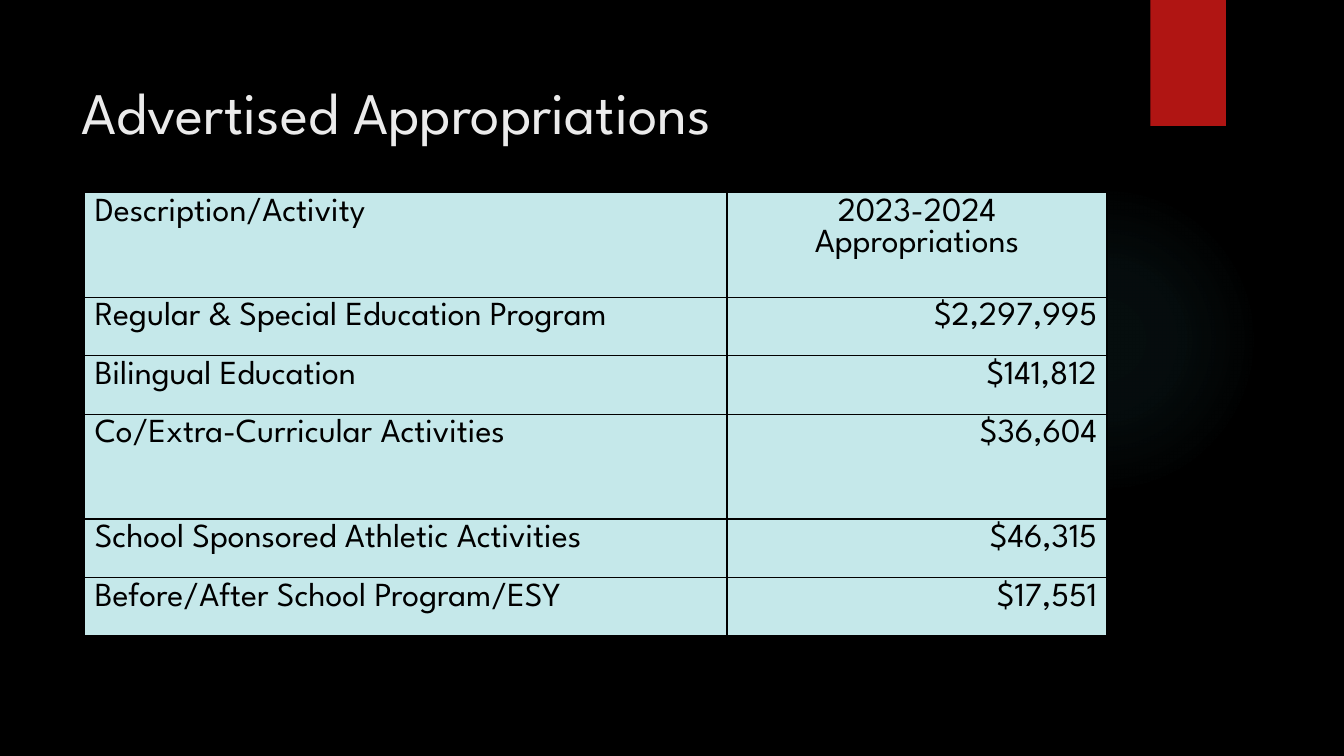
import pptx
import pptx.util
import pptx.dml.color
import pptx.enum.shapes
import pptx.enum.text
import pptx.oxml
import pptx.oxml.ns

Inches = pptx.util.Inches
SHAPE = pptx.enum.shapes.MSO_SHAPE
ALIGN = pptx.enum.text.PP_ALIGN
FONT = "League Spartan"

TITLE = "Advertised Appropriations"
ROWS = [
    ("Description/Activity", "2023-2024 Appropriations", 1.04),
    ("Regular & Special Education Program", "$2,297,995", 0.58),
    ("Bilingual Education", "$141,812", 0.58),
    ("Co/Extra-Curricular Activities", "$36,604", 1.04),
    ("School Sponsored Athletic Activities", "$46,315", 0.58),
    ("Before/After School Program/ESY", "$17,551", 0.58),
]
COL_WIDTHS = [6.37, 3.77]
GLOW_STOPS = [(0, 7), (36, 6), (69, 0)]
TITLE_FORMAT = {"name": FONT, "size": pptx.util.Pt(42), "bold": False}
CELL_FORMAT = {"name": FONT, "size": pptx.util.Pt(24), "bold": False}
TITLE_FRAME = {"word_wrap": True, "margin_top": Inches(0.25),
               "vertical_anchor": pptx.enum.text.MSO_ANCHOR.TOP}


def rgb(value):
    return pptx.dml.color.RGBColor.from_string(value)


def xml(tag, body):
    return pptx.oxml.parse_xml(f"<a:{tag} {pptx.oxml.ns.nsdecls('a')} {body}</a:{tag.split()[0]}>")


def apply(target, values):
    for name, value in values.items():
        setattr(target, name, value)


def write(tf, text, values, color, align):
    p = tf.paragraphs[0]
    p.alignment = align
    r = p.add_run()
    r.text = text
    apply(r.font, values)
    r.font.color.rgb = rgb(color)


def add_shape(s, kind, box, color):
    sp = s.shapes.add_shape(kind, *map(Inches, box))
    sp.shadow.inherit = False
    sp.fill.solid()
    sp.fill.fore_color.rgb = rgb(color)
    sp.line.fill.background()
    return sp


def add_glow(s):
    sp = add_shape(s, SHAPE.OVAL, (9.41, 1.83, 3.08, 3.08), "50B9C1")
    stops = "".join(
        f'<a:gs pos="{pos * 1000}"><a:srgbClr val="50B9C1"><a:alpha val="{alpha * 1000}"/></a:srgbClr></a:gs>'
        for pos, alpha in GLOW_STOPS)
    grad = xml("gradFill", f'><a:gsLst>{stops}</a:gsLst><a:path path="circle">'
               '<a:fillToRect l="50000" t="50000" r="50000" b="50000"/></a:path>')
    spPr = sp._element.spPr
    spPr.replace(spPr.find(pptx.oxml.ns.qn("a:solidFill")), grad)


def add_borders(cell):
    tcPr = cell._tc.get_or_add_tcPr()
    for i, side in enumerate(("lnL", "lnR", "lnT", "lnB")):
        tcPr.insert(i, xml(side, 'w="12700"><a:solidFill><a:srgbClr val="000000"/></a:solidFill>'))


def add_appropriations(s):
    table = s.shapes.add_table(len(ROWS), len(COL_WIDTHS), Inches(0.84), Inches(1.91),
                               Inches(sum(COL_WIDTHS)), Inches(sum(row[2] for row in ROWS))).table
    for column, width in zip(table.columns, COL_WIDTHS):
        column.width = Inches(width)
    for i, (activity, amount, height) in enumerate(ROWS):
        table.rows[i].height = Inches(height)
        amount_align = ALIGN.RIGHT if i else ALIGN.CENTER
        for j, (text, align) in enumerate([(activity, ALIGN.LEFT), (amount, amount_align)]):
            cell = table.cell(i, j)
            cell.fill.solid()
            cell.fill.fore_color.rgb = rgb("C5E8EA")
            add_borders(cell)
            write(cell.text_frame, text, CELL_FORMAT, "000000", align)


def main():
    prs = pptx.Presentation()
    prs.slide_width, prs.slide_height = Inches(13.33), Inches(7.5)
    s = prs.slides.add_slide(prs.slide_layouts[5])
    s.background.fill.solid()
    s.background.fill.fore_color.rgb = rgb("000000")

    add_glow(s)
    add_shape(s, SHAPE.RECTANGLE, (11.41, 0, 0.75, 1.25), "B01513")

    title = s.shapes.title
    apply(title, dict(zip(("left", "top", "width", "height"), map(Inches, (0.71, 0.5, 10.29, 1.53)))))
    apply(title.text_frame, TITLE_FRAME)
    write(title.text_frame, TITLE, TITLE_FORMAT, "EBEBEB", ALIGN.LEFT)

    add_appropriations(s)
    prs.save("out.pptx")


if __name__ == "__main__":
    main()
